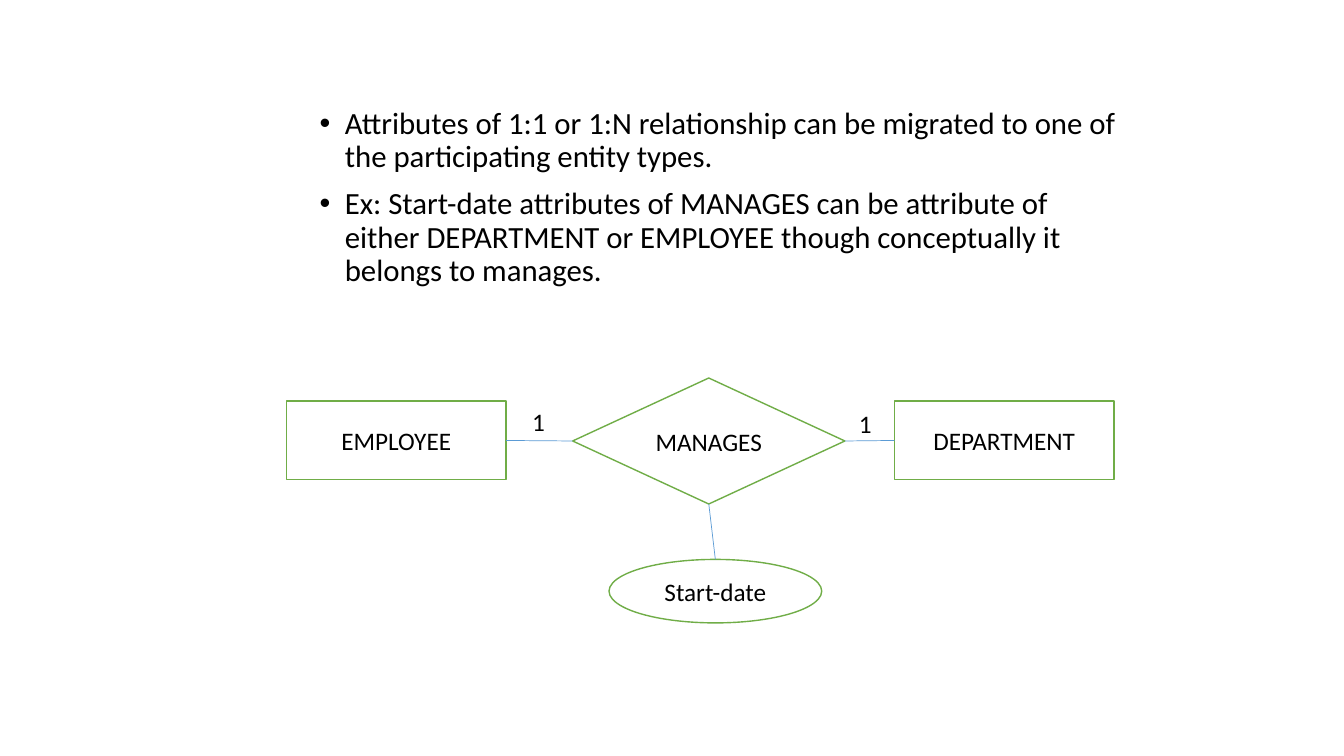
from typing import NamedTuple

from lxml import etree
from pptx import Presentation
from pptx.dml.color import RGBColor
from pptx.enum import shapes, text
from pptx.oxml import ns
from pptx.util import Inches, Pt

BLACK = RGBColor(0x00, 0x00, 0x00)
WHITE = RGBColor(0xFF, 0xFF, 0xFF)
GREEN = RGBColor(0x70, 0xAD, 0x47)
BLUE = RGBColor(0x5B, 0x9B, 0xD5)
FONT = "Calibri"
TOP, LEFT, BOTTOM, RIGHT = range(4)

BULLETS = (
    "Attributes of 1:1 or 1:N relationship can be migrated to one of the "
    "participating entity types.",
    "Ex: Start-date attributes of MANAGES can be attribute of either DEPARTMENT "
    "or EMPLOYEE though conceptually it belongs to manages.",
)


class Node(NamedTuple):
    label: str
    kind: shapes.MSO_SHAPE
    left: float
    top: float
    width: float
    height: float


class Link(NamedTuple):
    start: str
    start_side: int
    end: str
    end_side: int


class Cardinality(NamedTuple):
    label: str
    left: float
    top: float


NODES = (
    Node("EMPLOYEE", shapes.MSO_SHAPE.RECTANGLE, 2.84, 3.98, 2.18, 0.78),
    Node("DEPARTMENT", shapes.MSO_SHAPE.RECTANGLE, 8.87, 3.98, 2.18, 0.78),
    Node("MANAGES", shapes.MSO_SHAPE.DIAMOND, 5.68, 3.75, 2.7, 1.25),
    Node("Start-date", shapes.MSO_SHAPE.OVAL, 6.04, 5.55, 2.11, 0.63),
)
LINKS = (
    Link("EMPLOYEE", RIGHT, "MANAGES", LEFT),
    Link("MANAGES", RIGHT, "DEPARTMENT", LEFT),
    Link("MANAGES", BOTTOM, "Start-date", TOP),
)
CARDINALITIES = (Cardinality("1", 8.42, 4.0), Cardinality("1", 5.18, 3.98))


def write(para, content: str, *, size: float = 18, align=text.PP_ALIGN.LEFT) -> None:
    para.alignment = align
    span = para.add_run()
    span.text = content
    span.font.name = FONT
    span.font.size = Pt(size)
    span.font.color.rgb = BLACK


def add_bullets(page) -> None:
    body = page.placeholders[1]
    body.left, body.top = Inches(3.07), Inches(1.02)
    body.width, body.height = Inches(8.2), Inches(6.48)
    frame = body.text_frame
    frame.word_wrap = True
    frame.auto_size = text.MSO_AUTO_SIZE.NONE
    frame.vertical_anchor = text.MSO_ANCHOR.TOP
    for index, content in enumerate(BULLETS):
        para = frame.add_paragraph() if index else frame.paragraphs[0]
        para.line_spacing = 0.9
        para.space_before = Pt(10 if index else 0)
        properties = para._p.get_or_add_pPr()
        properties.set("marL", str(Inches(0.25)))
        properties.set("indent", str(Inches(-0.25)))
        etree.SubElement(properties, ns.qn("a:buFont"), typeface="Arial")
        etree.SubElement(properties, ns.qn("a:buChar"), char="•")
        write(para, content, size=22)


def add_node(page, node: Node):
    box = page.shapes.add_shape(
        node.kind, Inches(node.left), Inches(node.top),
        Inches(node.width), Inches(node.height))
    box.shadow.inherit = False
    box.fill.solid()
    box.fill.fore_color.rgb = WHITE
    box.line.color.rgb = GREEN
    box.line.width = Pt(1)
    box.text_frame.vertical_anchor = text.MSO_ANCHOR.MIDDLE
    write(box.text_frame.paragraphs[0], node.label, align=text.PP_ALIGN.CENTER)
    return box


def add_link(page, link: Link, boxes: dict) -> None:
    line = page.shapes.add_connector(shapes.MSO_CONNECTOR.STRAIGHT, 0, 0, 0, 0)
    line.begin_connect(boxes[link.start], link.start_side)
    # An oval also numbers its top connection site 0.
    line.end_connect(boxes[link.end], link.end_side)
    line.line.color.rgb = BLUE
    line.line.width = Pt(0.5)
    etree.SubElement(line._element.spPr, ns.qn("a:effectLst"))


def add_cardinality(page, mark: Cardinality) -> None:
    box = page.shapes.add_textbox(
        Inches(mark.left), Inches(mark.top), Inches(0.39), Inches(0.4))
    box.text_frame.word_wrap = True
    box.text_frame.auto_size = text.MSO_AUTO_SIZE.SHAPE_TO_FIT_TEXT
    write(box.text_frame.paragraphs[0], mark.label)


def main() -> None:
    deck = Presentation()
    deck.slide_width, deck.slide_height = Inches(13.33), Inches(7.5)
    page = deck.slides.add_slide(deck.slide_layouts[1])
    title = page.shapes.title._element
    title.getparent().remove(title)
    add_bullets(page)
    boxes = {node.label: add_node(page, node) for node in NODES}
    for link in LINKS:
        add_link(page, link, boxes)
    for mark in CARDINALITIES:
        add_cardinality(page, mark)
    deck.save("out.pptx")


if __name__ == "__main__":
    main()
